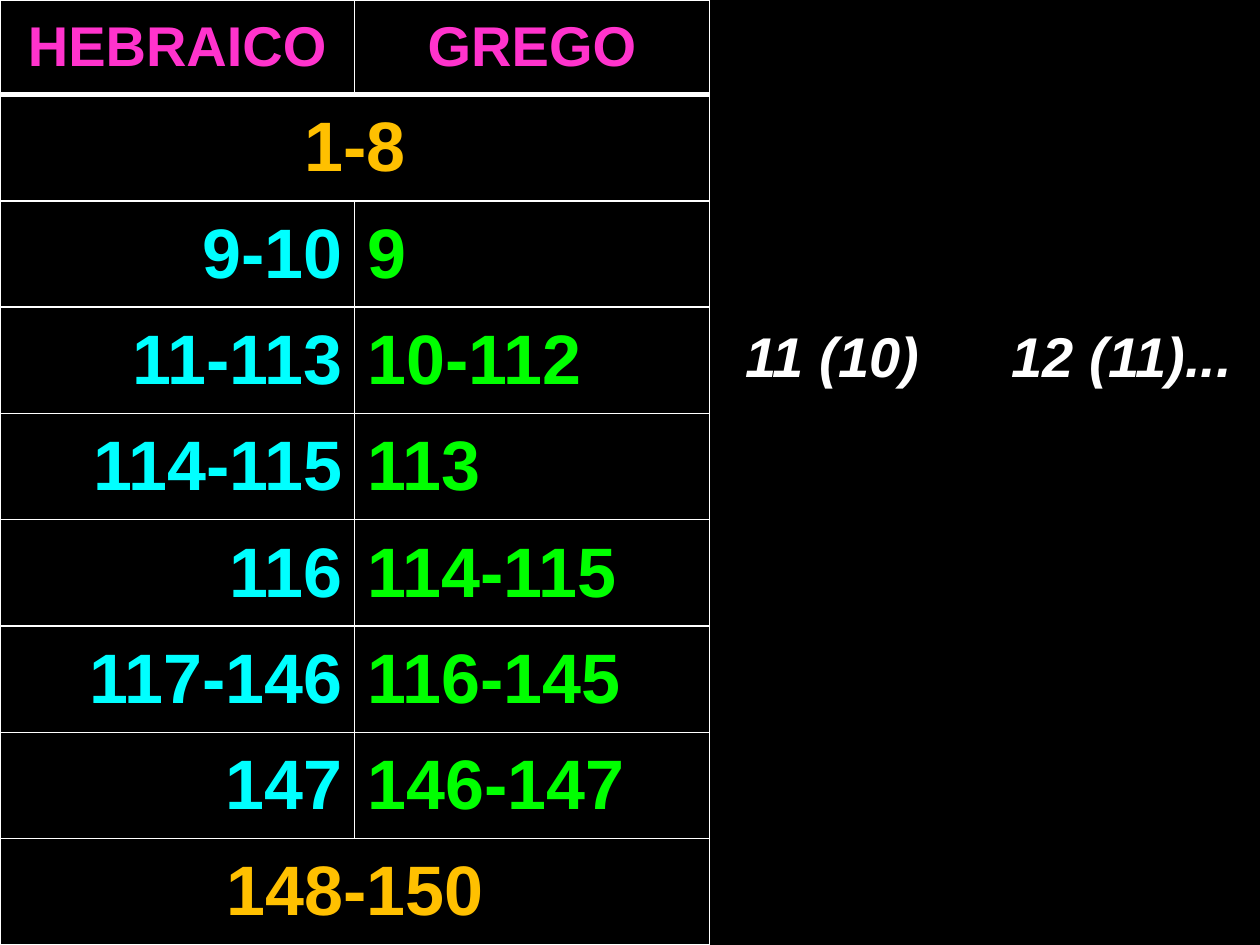
from dataclasses import dataclass

from lxml import etree
from pptx import Presentation
from pptx.dml.color import RGBColor
from pptx.enum.text import MSO_ANCHOR, PP_ALIGN
from pptx.oxml.ns import qn
from pptx.util import Inches, Pt

LEFT, CENTER, RIGHT = PP_ALIGN.LEFT, PP_ALIGN.CENTER, PP_ALIGN.RIGHT
MIDDLE, TOP = MSO_ANCHOR.MIDDLE, MSO_ANCHOR.TOP


@dataclass(frozen=True)
class Theme:
    font: str = "Arial"
    background: str = "000000"
    line: str = "FFFFFF"
    note: str = "FFFFFF"
    heading: str = "FF33CC"
    shared: str = "FFC000"
    hebrew: str = "00FFFF"
    greek: str = "00FF00"
    small: int = 32
    large: int = 40
    thin: int = 1
    thick: int = 3


THEME = Theme()
SLIDE_WIDTH, SLIDE_HEIGHT = 10, 7.5
TABLE_WIDTH, HEADER_HEIGHT = 5.63, 0.75
HEADINGS = ("HEBRAICO", "GREGO")
# One entry means the numbering is shared by both columns
PSALMS = (
    ("1-8",),
    ("9-10", "9"),
    ("11-113", "10-112"),
    ("114-115", "113"),
    ("116", "114-115"),
    ("117-146", "116-145"),
    ("147", "146-147"),
    ("148-150",),
)


def add_text(para, text, size, color, italic=False):
    span = para.add_run()
    span.text = text
    span.font.name = THEME.font
    span.font.size = Pt(size)
    span.font.bold = True
    span.font.italic = italic
    span.font.color.rgb = RGBColor.from_string(color)


def style_cell(cell, top, bottom):
    """Draw the four borders and leave the cell unfilled."""
    properties = cell._tc.get_or_add_tcPr()
    widths = {"L": THEME.thin, "R": THEME.thin, "T": top, "B": bottom}
    for side, width in widths.items():
        line = etree.SubElement(properties, qn(f"a:ln{side}"), w=str(Pt(width)))
        fill = etree.SubElement(line, qn("a:solidFill"))
        etree.SubElement(fill, qn("a:srgbClr"), val=THEME.line)
    cell.fill.background()
    cell.vertical_anchor = MIDDLE


def fill_cell(cell, text, size, color, align):
    para = cell.text_frame.paragraphs[0]
    para.alignment = align
    add_text(para, text, size, color)


def add_numbering_table(page):
    row_count = len(PSALMS) + 1
    table = page.shapes.add_table(
        row_count, 2, 0, 0, Inches(TABLE_WIDTH), Inches(SLIDE_HEIGHT)
    ).table
    table.horz_banding = False
    for column in table.columns:
        column.width = Inches(TABLE_WIDTH / 2)
    body_height = (SLIDE_HEIGHT - HEADER_HEIGHT) / len(PSALMS)
    for index, row in enumerate(table.rows):
        row.height = Inches(body_height if index else HEADER_HEIGHT)
        for cell in row.cells:
            style_cell(
                cell,
                THEME.thick if index == 1 else THEME.thin,
                THEME.thick if index == 0 else THEME.thin,
            )

    # Header
    for column, heading in enumerate(HEADINGS):
        fill_cell(table.cell(0, column), heading, THEME.small, THEME.heading, CENTER)

    # Psalm numbers
    for index, numbers in enumerate(PSALMS, start=1):
        first, second = table.cell(index, 0), table.cell(index, 1)
        if len(numbers) == 1:
            first.merge(second)
            fill_cell(first, numbers[0], THEME.large, THEME.shared, CENTER)
        else:
            fill_cell(first, numbers[0], THEME.large, THEME.hebrew, RIGHT)
            fill_cell(second, numbers[1], THEME.large, THEME.greek, LEFT)


def add_note(page, examples, tab_position):
    box = page.shapes.add_textbox(Inches(5.78), Inches(2.5), Inches(4.22), Inches(5))
    frame = box.text_frame
    frame.word_wrap = True
    frame.vertical_anchor = TOP
    frame.margin_left = Inches(0.14)
    para = frame.paragraphs[0]
    para.alignment = LEFT
    para.space_before = Pt(4)
    # A tab stop sets the second example apart
    tabs = etree.SubElement(para._p.get_or_add_pPr(), qn("a:tabLst"))
    etree.SubElement(tabs, qn("a:tab"), pos=str(Inches(tab_position)), algn="l")
    add_text(para, "\t".join(examples), THEME.small, THEME.note, italic=True)


def main():
    deck = Presentation()
    deck.slide_width, deck.slide_height = Inches(SLIDE_WIDTH), Inches(SLIDE_HEIGHT)
    page = deck.slides.add_slide(deck.slide_layouts[6])
    page.background.fill.solid()
    page.background.fill.fore_color.rgb = RGBColor.from_string(THEME.background)
    add_numbering_table(page)
    add_note(page, ("11 (10)", "12 (11)..."), 2.11)
    deck.save("out.pptx")


if __name__ == "__main__":
    main()
